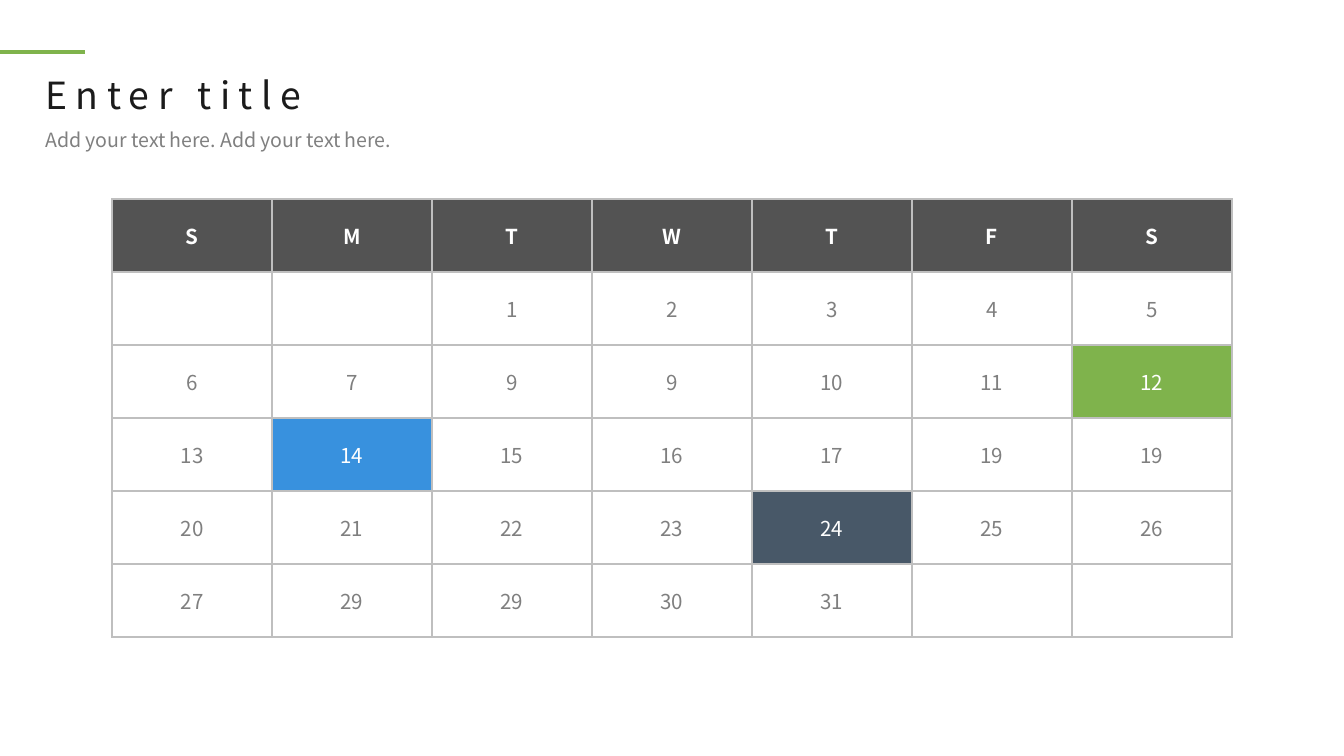
from dataclasses import dataclass

from lxml.etree import SubElement
from pptx import Presentation
from pptx.dml.color import RGBColor
from pptx.enum.shapes import MSO_CONNECTOR
from pptx.enum.text import MSO_ANCHOR, MSO_AUTO_SIZE, PP_ALIGN
from pptx.oxml.ns import qn
from pptx.util import Emu, Pt

SLIDE_W, SLIDE_H = 1344, 756
EMU_PER_PX = 9144000 / SLIDE_W
FONT = "Noto Sans CJK JP"
COLORS = {
    "title": "1B1B1B",
    "subtitle": "808080",
    "green": "7FB34C",
    "blue": "3891DE",
    "slate": "485868",
    "header": "535353",
    "day": "7F7F7F",
    "border": "BFBFBF",
    "white": "FFFFFF",
}
WEEKS = [
    ["S", "M", "T", "W", "T", "F", "S"],
    ["", "", "1", "2", "3", "4", "5"],
    ["6", "7", "9", "9", "10", "11", "12"],
    ["13", "14", "15", "16", "17", "19", "19"],
    ["20", "21", "22", "23", "24", "25", "26"],
    ["27", "29", "29", "30", "31", "", ""],
]
HIGHLIGHTS = {"12": "green", "14": "blue", "24": "slate"}
TABLE_LEFT, TABLE_TOP, COL_W, ROW_H = 112, 199, 160, 73


@dataclass
class Heading:
    text: str
    left: int
    top: int
    width: int
    height: int
    size: float
    color: str
    line_spacing: float = 1.0
    tracking: int = 0  # hundredths of a point
    wrap: bool = True


def px(n: int) -> Emu:
    return Emu(round(n * EMU_PER_PX))


def rgb(name: str) -> RGBColor:
    return RGBColor.from_string(COLORS[name])


def add_run(p, text: str, size: float, color: str, bold: bool = False):
    r = p.add_run()
    r.text = text
    r.font.name = FONT
    r.font.size = Pt(size)
    r.font.bold = bold
    r.font.color.rgb = rgb(color)
    return r


def fill_heading(sp, h: Heading) -> None:
    sp.left, sp.top, sp.width, sp.height = map(px, (h.left, h.top, h.width, h.height))
    tf = sp.text_frame
    tf.word_wrap = h.wrap
    tf.auto_size = MSO_AUTO_SIZE.NONE
    tf.vertical_anchor = MSO_ANCHOR.TOP
    p = tf.paragraphs[0]
    p.alignment = PP_ALIGN.LEFT
    p.line_spacing = h.line_spacing
    p.space_before = Pt(0)
    # No bullet or hanging indent
    pPr = p._p.get_or_add_pPr()
    pPr.set("marL", "0")
    pPr.set("indent", "0")
    SubElement(pPr, qn("a:buNone"))
    r = add_run(p, h.text, h.size, h.color)
    if h.tracking:
        r.font._element.set("spc", str(h.tracking))


def add_borders(cell) -> None:
    tcPr = cell._tc.get_or_add_tcPr()
    for side in ("lnL", "lnR", "lnT", "lnB"):
        ln = SubElement(tcPr, qn(f"a:{side}"), w=str(Pt(1)))
        fill = SubElement(ln, qn("a:solidFill"))
        SubElement(fill, qn("a:srgbClr"), val=COLORS["border"])


def fill_cell(cell, text: str, is_header: bool) -> None:
    cell.margin_left = cell.margin_right = px(7)
    cell.margin_top = cell.margin_bottom = px(3)
    cell.vertical_anchor = MSO_ANCHOR.MIDDLE
    add_borders(cell)
    fill = "header" if is_header else HIGHLIGHTS.get(text)
    if fill:
        cell.fill.solid()
        cell.fill.fore_color.rgb = rgb(fill)
    else:
        cell.fill.background()
    if text:
        p = cell.text_frame.paragraphs[0]
        p.alignment = PP_ALIGN.CENTER
        add_run(p, text, 11, "white" if fill else "day", is_header)


def add_calendar(s) -> None:
    rows, cols = len(WEEKS), len(WEEKS[0])
    table = s.shapes.add_table(rows, cols, px(TABLE_LEFT), px(TABLE_TOP),
                               px(cols * COL_W), px(rows * ROW_H)).table
    table.first_row = table.horz_banding = False
    for col in table.columns:
        col.width = px(COL_W)
    for i, (row, week) in enumerate(zip(table.rows, WEEKS)):
        row.height = px(ROW_H)
        for cell, text in zip(row.cells, week):
            fill_cell(cell, text, i == 0)


def add_accent(s) -> None:
    line = s.shapes.add_connector(MSO_CONNECTOR.STRAIGHT, px(0), px(52), px(85), px(52))
    line.line.color.rgb = rgb("green")
    line.line.width = Pt(2)
    SubElement(line._element.spPr, qn("a:effectLst"))


def main() -> None:
    prs = Presentation()
    prs.slide_width, prs.slide_height = px(SLIDE_W), px(SLIDE_H)
    s = prs.slides.add_slide(prs.slide_layouts[1])

    # Calendar and accent line
    add_calendar(s)
    add_accent(s)

    # Title and subtitle
    fill_heading(s.shapes.title, Heading(
        "Enter title", 32, 74, 301, 50, 20, "title",
        line_spacing=0.8, tracking=450, wrap=False))
    fill_heading(s.placeholders[1], Heading(
        "Add your text here. Add your text here.", 32, 121, 568, 38, 10.5, "subtitle"))

    prs.save("out.pptx")


if __name__ == "__main__":
    main()
